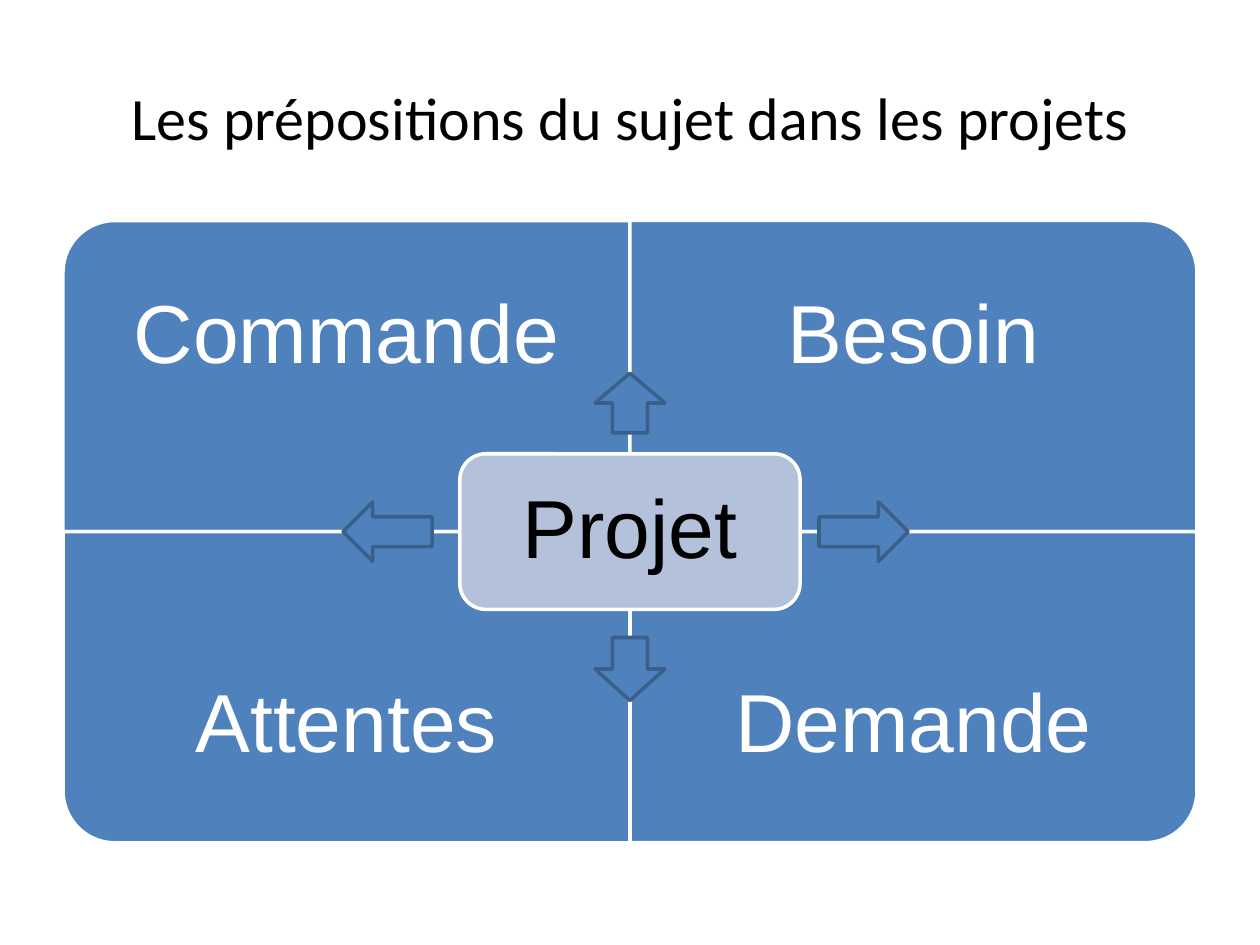
from dataclasses import dataclass

from pptx import Presentation
from pptx.dml.color import RGBColor
from pptx.enum.shapes import MSO_SHAPE
from pptx.enum.text import MSO_ANCHOR, MSO_AUTO_SIZE, PP_ALIGN
from pptx.util import Pt

CENTER = PP_ALIGN.CENTER
MIDDLE = MSO_ANCHOR.MIDDLE
NO_AUTOFIT = MSO_AUTO_SIZE.NONE
ONE_ROUND = MSO_SHAPE.ROUND_1_RECTANGLE
ROUNDED = MSO_SHAPE.ROUNDED_RECTANGLE
RIGHT = MSO_SHAPE.RIGHT_ARROW
LEFT = MSO_SHAPE.LEFT_ARROW
UP = MSO_SHAPE.UP_ARROW
DOWN = MSO_SHAPE.DOWN_ARROW


@dataclass(frozen=True)
class Theme:
    blue: RGBColor = RGBColor.from_string("4F81BD")
    pale: RGBColor = RGBColor.from_string("B3C1DB")
    edge: RGBColor = RGBColor.from_string("3A5F8B")
    white: RGBColor = RGBColor.from_string("FFFFFF")
    black: RGBColor = RGBColor.from_string("000000")
    title_font: str = "Calibri"
    label_font: str = "Arial"
    title_size: float = 34.3
    label_size: float = 47
    line: float = 2


theme = Theme()
prs = Presentation()
prs.slide_width, prs.slide_height = Pt(720), Pt(540)
slide = prs.slides.add_slide(prs.slide_layouts[5])


def write(holder, text, *, font=theme.label_font, size=theme.label_size,
          color=theme.white, inset=None, spacing=None):
    frame = holder.text_frame
    frame.word_wrap = True
    frame.auto_size = NO_AUTOFIT
    frame.vertical_anchor = MIDDLE
    if inset is not None:
        frame.margin_left = frame.margin_right = Pt(inset)
        frame.margin_top = frame.margin_bottom = Pt(inset)
    paragraph = frame.paragraphs[0]
    paragraph.alignment = CENTER
    paragraph.line_spacing = spacing
    run = paragraph.add_run()
    run.text = text
    run.font.name = font
    run.font.size = Pt(size)
    run.font.color.rgb = color


def draw(preset, center_x, center_y, width, height, fill, line, rotation=0):
    shape = slide.shapes.add_shape(preset, Pt(center_x - width / 2), Pt(center_y - height / 2),
                                   Pt(width), Pt(height))
    shape.rotation = rotation
    shape.shadow.inherit = False
    shape.fill.solid()
    shape.fill.fore_color.rgb = fill
    shape.line.color.rgb = line
    shape.line.width = Pt(theme.line)
    return shape


title = slide.shapes.title
title.left, title.top, title.width, title.height = Pt(36), Pt(21.6), Pt(648), Pt(90)
write(title, "Les prépositions du sujet dans les projets",
      font=theme.title_font, size=theme.title_size, color=theme.black)

middle_x, middle_y = 360, 303.8
tile_w, tile_h = 324, 177.8
label_h = tile_h * 0.75

quadrants = [
    ("Commande", -1, -1, 270),
    ("Besoin", 1, -1, 0),
    ("Attentes", -1, 1, 180),
    ("Demande", 1, 1, 90),
]
for word, side_x, side_y, rotation in quadrants:
    center_x = middle_x + side_x * tile_w / 2
    center_y = middle_y + side_y * tile_h / 2
    width, height = (tile_h, tile_w) if rotation in (90, 270) else (tile_w, tile_h)
    draw(ONE_ROUND, center_x, center_y, width, height, theme.blue, theme.white, rotation)
    label_y = middle_y + side_y * (tile_h - label_h / 2)
    label = slide.shapes.add_textbox(Pt(center_x - tile_w / 2), Pt(label_y - label_h / 2),
                                     Pt(tile_w), Pt(label_h))
    write(label, word, inset=26.6, spacing=0.9)

project = draw(ROUNDED, middle_x, middle_y, tile_w * 0.6, tile_h / 2, theme.pale, theme.white)
write(project, "Projet", color=theme.black, inset=14.4, spacing=0.9)

arrows = [
    (RIGHT, 133.5, 0, 51, 34),
    (LEFT, -138.5, 0, 51, 34),
    (UP, 0, -73.5, 40, 34),
    (DOWN, 0, 78.5, 40, 36),
]
for preset, offset_x, offset_y, width, height in arrows:
    draw(preset, middle_x + offset_x, middle_y + offset_y, width, height, theme.blue, theme.edge)

prs.save("out.pptx")
